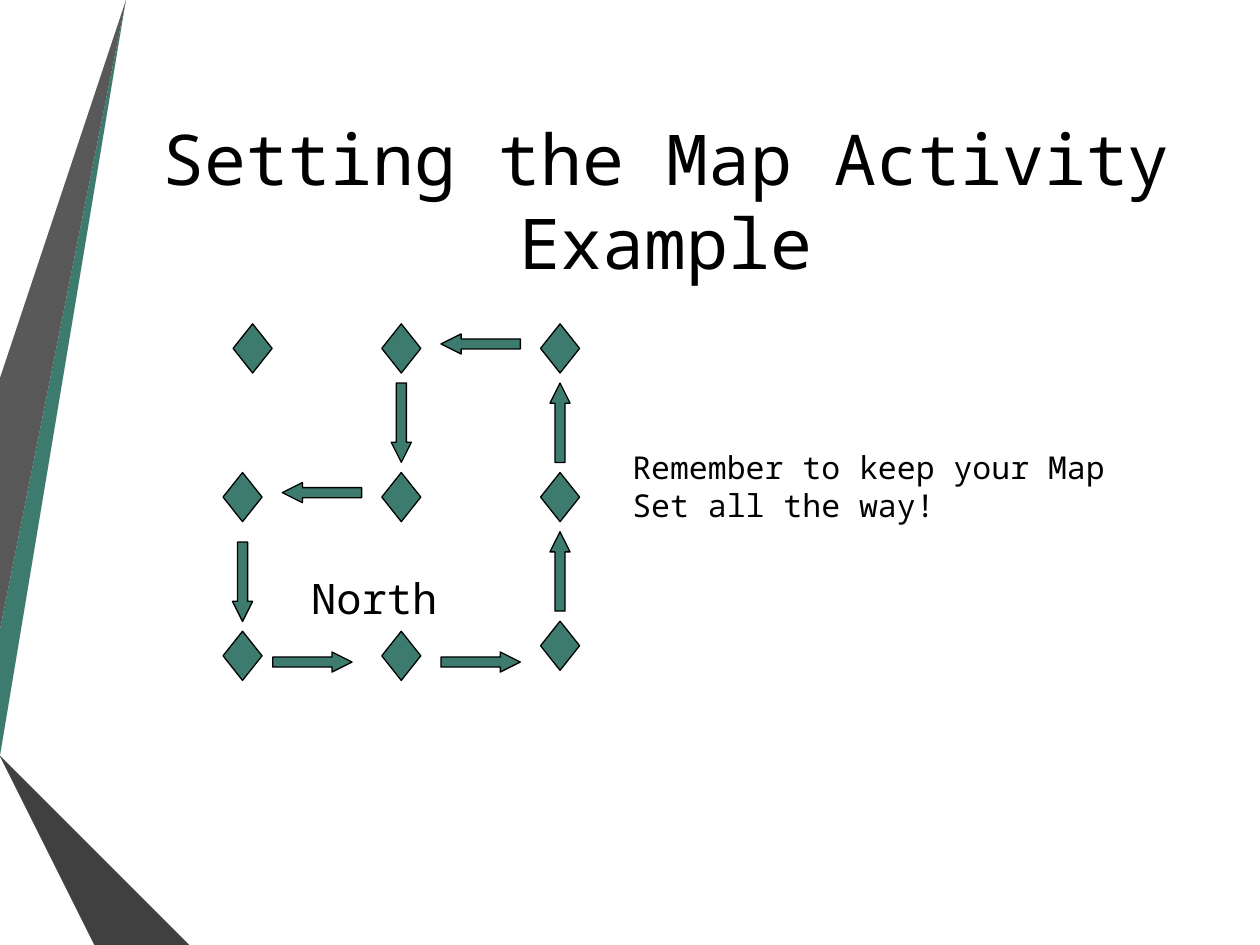
import pptx
import pptx.dml.color
import pptx.enum.shapes
import pptx.enum.text
import pptx.oxml.ns
import pptx.util
from lxml import etree

Inches = pptx.util.Inches
Shape = pptx.enum.shapes.MSO_SHAPE
Align = pptx.enum.text.PP_ALIGN

THEME = {
    "text": "000000", "green": "3D7B6F", "deep_green": "2E5C53", "shade_green": "1F3D38",
    "grey": "595959", "deep_grey": "404040", "shade_grey": "262626",
    "font": "Noto Sans Mono", "title": 40, "label": 24, "note": 18, "outline": 0.75,
}

# Course grid: centre of the top left marker, and the steps between markers
LEFT, TOP = 1.925, 2.765
COLUMN, ROW = 1.26, 1.18
MARKER = (0.31, 0.39)
ARROW = (0.63, 0.16)


def paint(shape, colour, outlined=False):
    shape.shadow.inherit = False
    shape.fill.solid()
    shape.fill.fore_color.rgb = pptx.dml.color.RGBColor.from_string(THEME[colour])
    if outlined:
        shape.line.color.rgb = pptx.dml.color.RGBColor.from_string(THEME["text"])
        shape.line.width = pptx.util.Pt(THEME["outline"])
    else:
        shape.line.fill.background()


def write(shape, box, text, size, alignment):
    """Place a text shape and give it one formatted run; return the paragraph."""
    shape.left, shape.top, shape.width, shape.height = map(Inches, box)
    shape.text_frame.word_wrap = True
    shape.text_frame.auto_size = pptx.enum.text.MSO_AUTO_SIZE.NONE
    paragraph = shape.text_frame.paragraphs[0]
    paragraph.alignment = alignment
    paragraph.space_before = 0
    run = paragraph.add_run()
    run.text = text
    run.font.name = THEME["font"]
    run.font.size = pptx.util.Pt(THEME[size])
    run.font.color.rgb = pptx.dml.color.RGBColor.from_string(THEME["text"])
    return paragraph


presentation = pptx.Presentation()
presentation.slide_width, presentation.slide_height = Inches(10), Inches(7.5)
slide = presentation.slides.add_slide(presentation.slide_layouts[1])

# Folded ribbons along the left edge
ribbons = [
    ("green", [(0, 5.44), (0, 5.75), (0.22, 5.79), (1.17, 0), (0.89, 0)]),
    ("grey", [(0.83, 0), (0.55, 0), (0, 3.36), (0, 5.06)]),
    ("shade_grey", [(0, 6.19), (0, 6.21), (0.93, 7.5), (0.99, 7.5)]),
    ("shade_green", [(0, 5.79), (0, 5.8), (1.56, 7.5), (1.63, 7.5)]),
    ("deep_green", [(0, 5.79), (1.63, 7.5), (2.33, 7.5), (0.22, 5.79), (0, 5.75)]),
    ("deep_grey", [(0, 6.19), (0.99, 7.5), (1.51, 7.5), (0, 5.86)]),
]
for colour, points in ribbons:
    builder = slide.shapes.build_freeform(*points[0], scale=Inches(1))
    builder.add_line_segments(points[1:], close=True)
    paint(builder.convert_to_shape(), colour)

# Title and body, brought in front of the ribbons
title, body = slide.shapes.title, slide.placeholders[1]
for placeholder in (title, body):
    placeholder.element.getparent().append(placeholder.element)
    placeholder.text_frame.vertical_anchor = pptx.enum.text.MSO_ANCHOR.MIDDLE
write(title, (1.07, 0.5, 8.43, 2.17), "Setting the Map Activity Example", "title", Align.CENTER)
north = write(body, (1.07, 2.92, 8.43, 3.64), "North", "label", Align.LEFT)
properties = north._p.get_or_add_pPr()
properties.set("marL", str(Inches(1.3)))
properties.set("indent", "0")
etree.SubElement(properties, pptx.oxml.ns.qn("a:buNone"))

# Markers on a three by three grid, a few of them nudged off it
nudges = {(0, 0): (0.08, 0), (0, 2): (0, 0.08), (1, 2): (0, 0.08)}
for row in range(3):
    for column in range(3):
        across, down = nudges.get((column, row), (0, 0))
        marker = slide.shapes.add_shape(
            Shape.DIAMOND,
            Inches(LEFT + column * COLUMN + across - MARKER[0] / 2),
            Inches(TOP + row * ROW + down - MARKER[1] / 2),
            *map(Inches, MARKER))
        paint(marker, "green", outlined=True)

# Arrows of the route: centre in grid columns and rows, then rotation
route = [
    (0.44, 2.11, 0), (1.5, 2.11, 0), (2, 1.5, 270), (1.5, -0.03, 180),
    (1, 0.5, 90), (0.5, 0.97, 180), (2, 0.5, 270), (0, 1.57, 90),
]
for column, row, rotation in route:
    arrow = slide.shapes.add_shape(
        Shape.RIGHT_ARROW,
        Inches(LEFT + column * COLUMN - ARROW[0] / 2),
        Inches(TOP + row * ROW - ARROW[1] / 2),
        *map(Inches, ARROW))
    arrow.rotation = rotation
    arrow.adjustments[1] = 1
    paint(arrow, "green", outlined=True)

note_box = (4.92, 3.51, 4.14, 0.7)
note = slide.shapes.add_textbox(*map(Inches, note_box))
write(note, note_box, "Remember to keep your Map Set all the way!", "note", Align.LEFT)

presentation.save("out.pptx")
